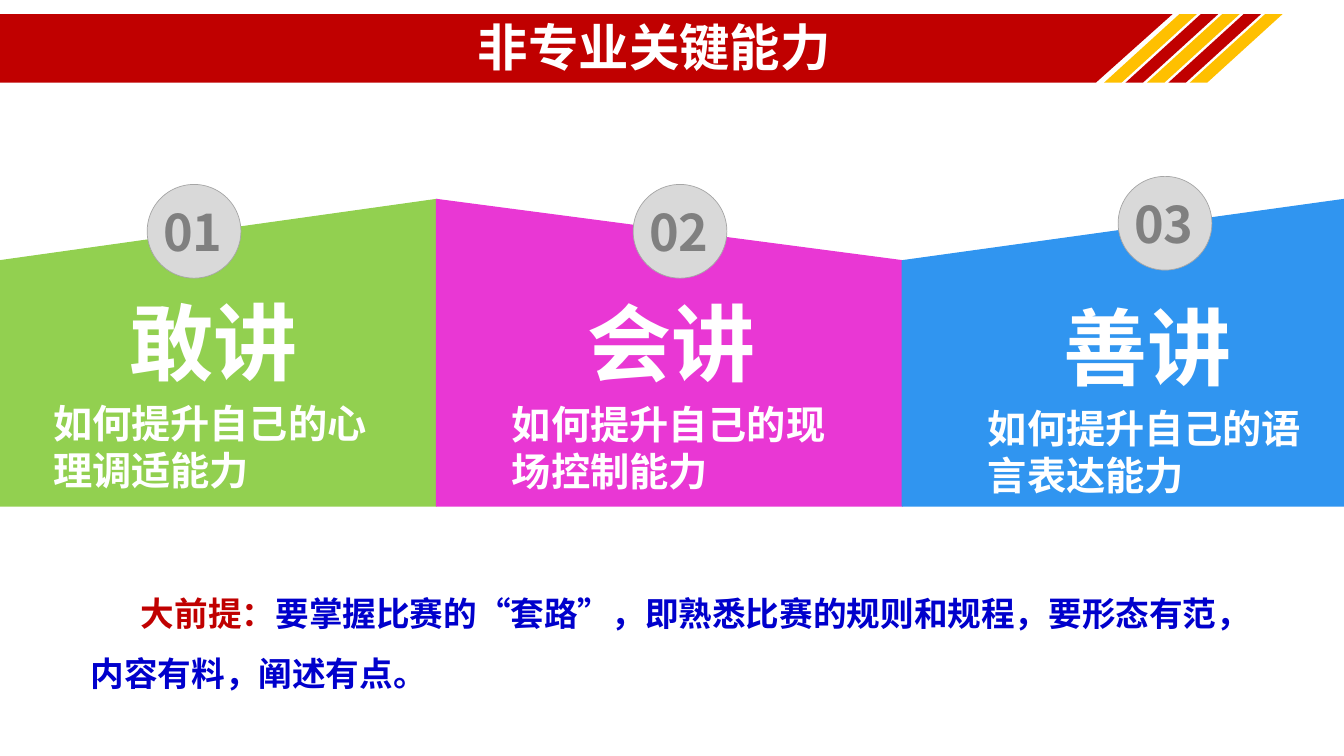
from lxml import etree
from pptx import Presentation
from pptx.dml.color import RGBColor
from pptx.enum.shapes import MSO_SHAPE
from pptx.enum.text import MSO_ANCHOR, MSO_AUTO_SIZE, PP_ALIGN
from pptx.oxml.ns import qn
from pptx.util import Emu, Inches, Pt

PARALLELOGRAM = MSO_SHAPE.PARALLELOGRAM
SLOPED_PANEL = MSO_SHAPE.FLOWCHART_MANUAL_INPUT
OVAL = MSO_SHAPE.OVAL
CENTER, LEFT = PP_ALIGN.CENTER, PP_ALIGN.LEFT
MIDDLE, TOP = MSO_ANCHOR.MIDDLE, MSO_ANCHOR.TOP
NO_AUTOFIT = MSO_AUTO_SIZE.NONE

SLIDE_W, SLIDE_H = 13.33, 7.5
CJK_FONT, TITLE_FONT = "Noto Sans CJK SC", "Roboto"
COLORS = {
    "red": "C00000", "gold": "FFC000", "white": "FFFFFF",
    "green": "92D050", "pink": "E937D4", "blue": "3095F0",
    "badge": "D9D9D9", "badge_edge": "A6A6A6", "number": "808080",
    "premise": "0000CC",
}
# number, heading, question, colour, width, flipped, badge (x, y), text (x, y)
PANELS = [
    ("01", "敢讲", "如何提升自己的心理调适能力", "green", 4.33, False,
     (1.46, 1.83), (0.43, 2.83)),
    ("02", "会讲", "如何提升自己的现场控制能力", "pink", 4.62, True,
     (6.28, 1.83), (4.98, 2.84)),
    ("03", "善讲", "如何提升自己的语言表达能力", "blue", 4.38, False,
     (11.09, 1.75), (9.7, 2.88)),
]


def rgb(name):
    return RGBColor.from_string(COLORS[name])


def paint(shape, fill, edge=None, edge_width=1):
    shape.shadow.inherit = False
    shape.fill.solid()
    shape.fill.fore_color.rgb = rgb(fill)
    if edge:
        shape.line.color.rgb = rgb(edge)
        shape.line.width = Pt(edge_width)
    else:
        shape.line.fill.background()


def add_painted(slide, preset, box, fill, edge=None, edge_width=1):
    shape = slide.shapes.add_shape(preset, *map(Inches, box))
    paint(shape, fill, edge, edge_width)
    return shape


def style_run(run, size, color, font=CJK_FONT):
    run.font.size = Pt(size)
    run.font.bold = True
    run.font.name = font
    run.font.color.rgb = rgb(color)
    east_asian = etree.SubElement(run.font._element, qn("a:ea"))
    east_asian.set("typeface", CJK_FONT)


def add_text_frame(slide, box):
    frame = slide.shapes.add_textbox(*map(Inches, box)).text_frame
    frame.word_wrap = True
    frame.vertical_anchor = TOP
    return frame


def add_header(slide, top, height):
    """Red band with a slanted end, five stripes and the slide title."""
    slant, band_right = 0.76, 11.63
    outline = slide.shapes.build_freeform(0, Inches(top), scale=1.0)
    corners = [(band_right, top), (band_right - slant, top + height),
               (0, top + height)]
    outline.add_line_segments([(Inches(x), Inches(y)) for x, y in corners])
    paint(outline.convert_to_shape(), "red")

    for index in range(5):
        stripe = add_painted(slide, PARALLELOGRAM,
                             (10.95 + 0.2125 * index, top, 0.92, height),
                             ("gold", "red")[index % 2])
        stripe.adjustments[0] = 1.098

    title = slide.shapes.title
    title.left, title.top = Inches(0.74), Inches(0.37)
    title.width, title.height = Inches(11.5), Inches(0.26)
    frame = title.text_frame
    frame.text = "非专业关键能力"
    frame.auto_size = NO_AUTOFIT
    frame.word_wrap = True
    frame.vertical_anchor = MIDDLE
    heading = frame.paragraphs[0]
    heading.alignment = CENTER
    heading.line_spacing = 0.9
    style_run(heading.runs[0], 36, "white", TITLE_FONT)
    slide.shapes._spTree.append(title._element)  # title in front of the band


def add_badge(slide, x, y, number):
    size = 0.93
    add_painted(slide, OVAL, (x, y, size, size), "badge", "badge_edge", 0.5)
    frame = add_text_frame(slide, (x + 0.06, y + 0.12, size, 0.71))
    frame.text = number
    style_run(frame.paragraphs[0].runs[0], 36, "number")


def add_panel_text(slide, x, y, heading, question):
    frame = add_text_frame(slide, (x, y, 3.37, 2.14))
    frame.text = f"{heading}\n{question}"
    for paragraph, size, align in zip(frame.paragraphs, (60, 28), (CENTER, LEFT)):
        paragraph.alignment = align
        paragraph.space_after = Pt(6)
        style_run(paragraph.runs[0], size, "white")


def add_panels(slide, top, height):
    left = 0
    for number, heading, question, color, width, flipped, badge, text in PANELS:
        panel = add_painted(slide, SLOPED_PANEL, (left, top, width, height),
                            color, color)
        if flipped:
            panel._element.spPr.xfrm.set("flipH", "1")
        add_badge(slide, *badge, number)
        add_panel_text(slide, *text, heading, question)
        left += width


def add_premise(slide, box):
    frame = add_text_frame(slide, box)
    paragraph = frame.paragraphs[0]
    paragraph.line_spacing = 1.5
    paragraph._p.get_or_add_pPr().set("indent", str(Emu(Inches(0.5))))
    parts = [
        ("大前提：", "red"),
        ("要掌握比赛的“套路”，即熟悉比赛的规则和规程，要形态有范，内容有料，阐述有点。",
         "premise"),
    ]
    for words, color in parts:
        run = paragraph.add_run()
        run.text = words
        style_run(run, 24, color)


def main():
    deck = Presentation()
    deck.slide_width, deck.slide_height = Inches(SLIDE_W), Inches(SLIDE_H)
    slide = deck.slides.add_slide(deck.slide_layouts[5])
    slide.background.fill.solid()
    slide.background.fill.fore_color.rgb = rgb("white")
    add_header(slide, 0.14, 0.68)
    add_panels(slide, 1.98, 3.04)
    add_premise(slide, (0.8, 5.63, 12.02, 1.24))
    deck.save("out.pptx")


if __name__ == "__main__":
    main()
